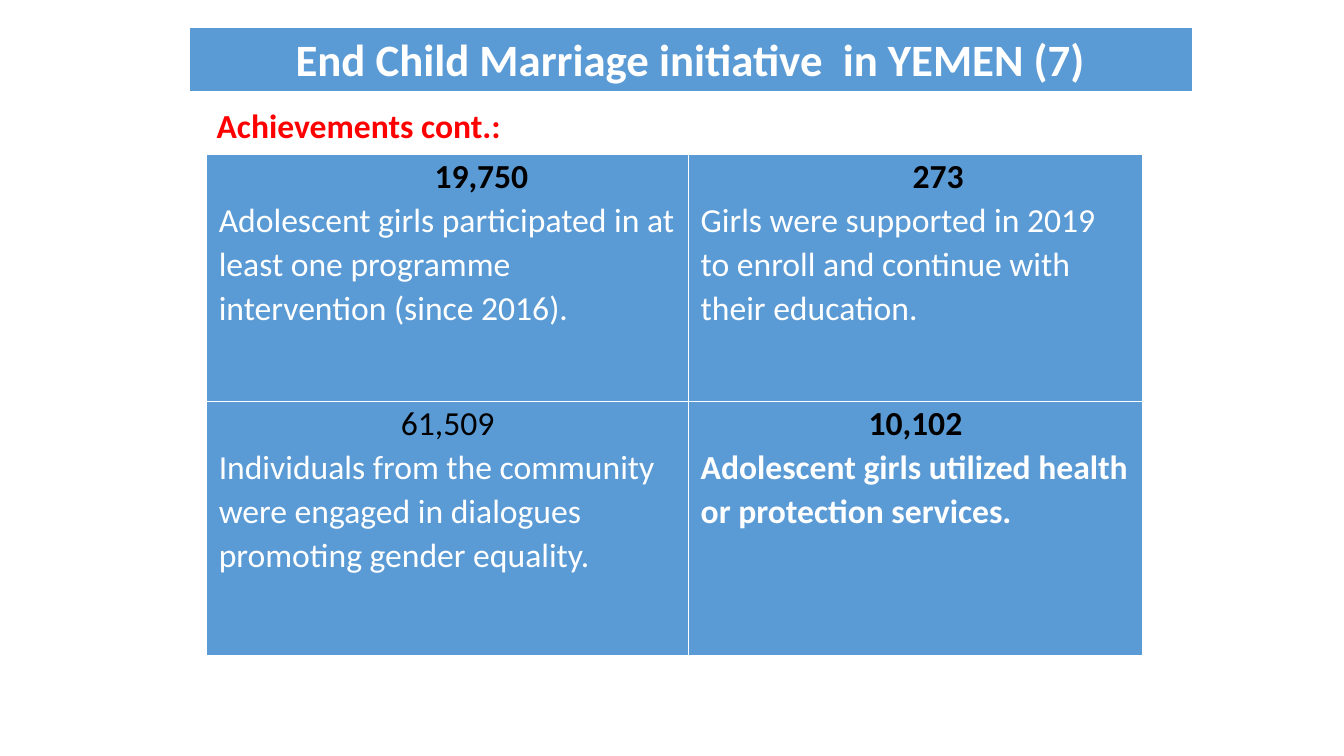
"""Build the slide of achievements of the End Child Marriage initiative in Yemen."""
from dataclasses import dataclass

from lxml import etree
from pptx import Presentation
from pptx import util as u
from pptx.dml.color import RGBColor
from pptx.enum import shapes, text
from pptx.oxml import ns


@dataclass(frozen=True)
class Theme:
    font: str = "Calibri"
    blue: str = "5B9BD5"
    white: str = "FFFFFF"
    black: str = "000000"
    red: str = "FF0000"
    title_size: int = 32
    body_size: int = 24


theme = Theme()


def add_run(paragraph, words, color, size=theme.body_size, bold=True):
    run = paragraph.add_run()
    run.text = words
    run.font.name = theme.font
    run.font.size = u.Pt(size)
    run.font.bold = bold
    run.font.color.rgb = RGBColor.from_string(color)


def add_border(cell, side):
    properties = cell._tc.get_or_add_tcPr()
    line = etree.SubElement(properties, ns.qn(f"a:{side}"), w=str(u.Pt(1)))
    fill = etree.SubElement(line, ns.qn("a:solidFill"))
    etree.SubElement(fill, ns.qn("a:srgbClr"), val=theme.white)


presentation = Presentation()
presentation.slide_width = u.Inches(13.33)
presentation.slide_height = u.Inches(7.5)
slide = presentation.slides.add_slide(presentation.slide_layouts[6])

achievements = [
    [("19,750", 0.67, True,
      "Adolescent girls participated in at least one programme intervention (since 2016).", False),
     ("273", 0.45, True,
      "Girls were supported in 2019 to enroll and continue with their education.", False)],
    [("61,509", 0, False,
      "Individuals from the community were engaged in dialogues promoting gender equality.", False),
     ("10,102", 0, True,
      "Adolescent girls utilized health or protection services.", True)],
]
column_widths = [4.78, 4.5]
row_heights = [2.45, 2.52]

table = slide.shapes.add_table(
    len(row_heights), len(column_widths), u.Inches(2.05), u.Inches(1.53),
    u.Inches(sum(column_widths)), u.Inches(sum(row_heights))).table
table.first_row = False
table.horz_banding = False
for column, width in zip(table.columns, column_widths):
    column.width = u.Inches(width)

for row, height, achievement_row in zip(table.rows, row_heights, achievements):
    row.height = u.Inches(height)
    for cell, achievement in zip(row.cells, achievement_row):
        figure, indent, figure_bold, description, description_bold = achievement
        cell.margin_left = cell.margin_right = u.Inches(0.12)
        cell.margin_top = cell.margin_bottom = 0
        for side in ("lnL", "lnR", "lnT", "lnB"):
            add_border(cell, side)
        cell.fill.solid()
        cell.fill.fore_color.rgb = RGBColor.from_string(theme.blue)

        paragraph = cell.text_frame.paragraphs[0]
        paragraph.alignment = text.PP_ALIGN.CENTER
        paragraph.line_spacing = 1.07
        paragraph._p.get_or_add_pPr().set("marL", str(u.Inches(indent)))
        add_run(paragraph, figure, theme.black, bold=figure_bold)

        paragraph = cell.text_frame.add_paragraph()
        paragraph.line_spacing = 1.07
        add_run(paragraph, description, theme.white, bold=description_bold)

banner = slide.shapes.add_shape(
    shapes.MSO_SHAPE.RECTANGLE,
    u.Inches(1.87), u.Inches(0.27), u.Inches(9.96), u.Inches(0.64))
banner.shadow.inherit = False
banner.fill.solid()
banner.fill.fore_color.rgb = RGBColor.from_string(theme.blue)
banner.line.color.rgb = RGBColor.from_string(theme.white)
banner.line.width = u.Pt(1.5)
banner.text_frame.word_wrap = True
banner.text_frame.vertical_anchor = text.MSO_ANCHOR.TOP
paragraph = banner.text_frame.paragraphs[0]
paragraph.alignment = text.PP_ALIGN.CENTER
add_run(paragraph, "End Child Marriage initiative  in YEMEN (7)", theme.white, theme.title_size)

subtitle = slide.shapes.add_textbox(
    u.Inches(2.05), u.Inches(0.99), u.Inches(5.01), u.Inches(0.5))
subtitle.text_frame.word_wrap = True
add_run(subtitle.text_frame.paragraphs[0], "Achievements cont.:", theme.red)

presentation.save("out.pptx")
